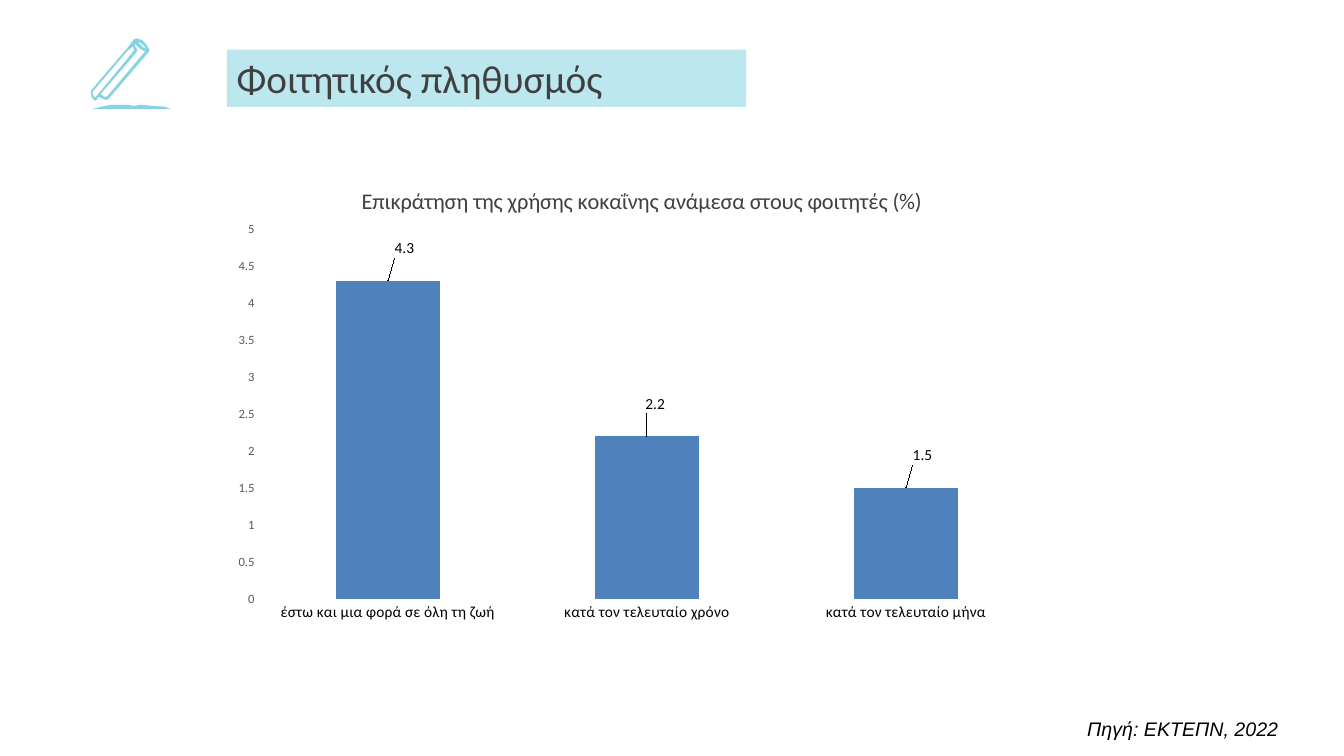
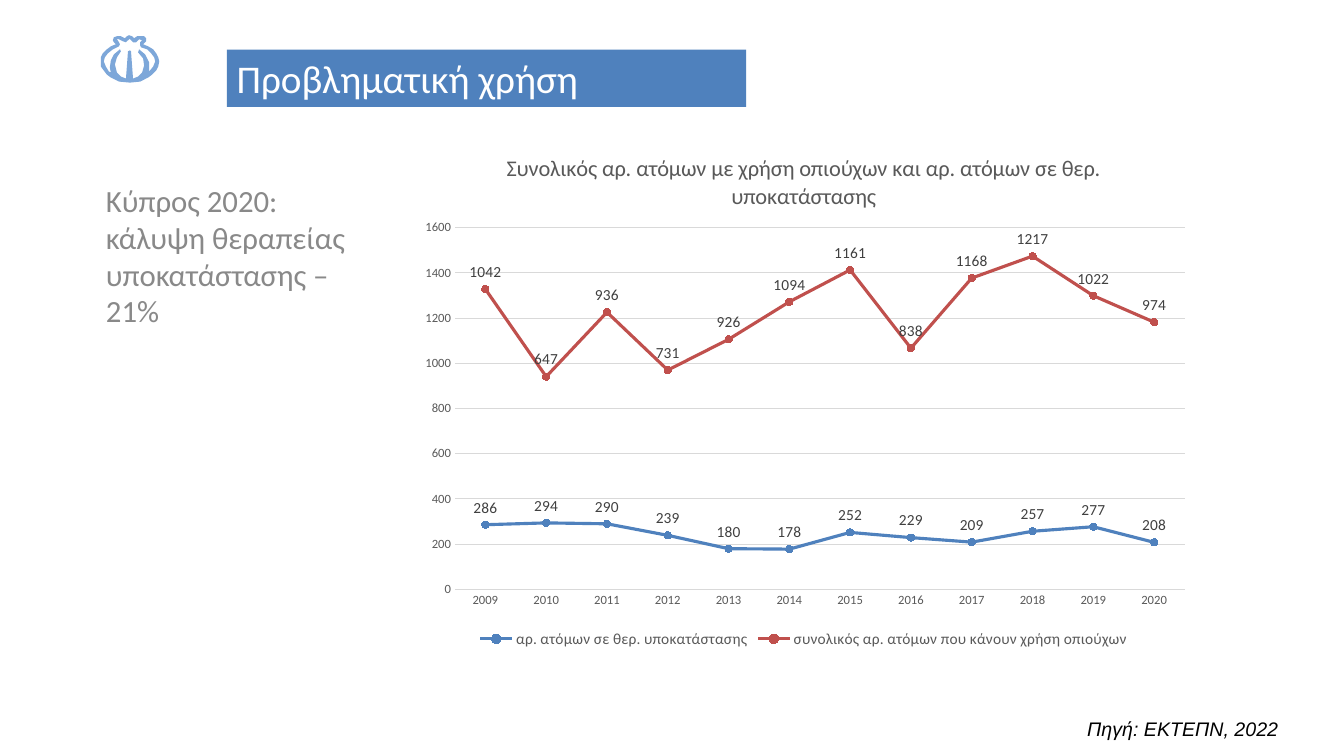
"""Build two slides on drug use in Cyprus, each with a title band, an icon and a chart."""
from dataclasses import dataclass

from lxml import etree
from pptx import Presentation
from pptx.chart.axis import CategoryAxis, ValueAxis
from pptx.chart.chart import Chart
from pptx.chart.data import CategoryChartData
from pptx.dml.color import RGBColor
from pptx.enum.chart import (XL_CHART_TYPE, XL_LABEL_POSITION, XL_LEGEND_POSITION,
                             XL_MARKER_STYLE, XL_TICK_MARK)
from pptx.enum.shapes import MSO_SHAPE
from pptx.enum.text import MSO_ANCHOR, PP_ALIGN
from pptx.oxml.ns import qn
from pptx.shapes.autoshape import Shape
from pptx.slide import Slide
from pptx.text.text import Font
from pptx.util import Pt

COLUMNS = XL_CHART_TYPE.COLUMN_CLUSTERED
STACKED_LINES = XL_CHART_TYPE.LINE_MARKERS_STACKED
ABOVE = XL_LABEL_POSITION.ABOVE
OUTSIDE_END = XL_LABEL_POSITION.OUTSIDE_END
LEGEND_BOTTOM = XL_LEGEND_POSITION.BOTTOM
CIRCLE = XL_MARKER_STYLE.CIRCLE
NO_TICK = XL_TICK_MARK.NONE
RECTANGLE = MSO_SHAPE.RECTANGLE
TOP = MSO_ANCHOR.TOP
LEFT = PP_ALIGN.LEFT

COLORS = {
    "black": "000000",
    "white": "FFFFFF",
    "dark": "404040",
    "gray": "595959",
    "muted": "898989",
    "grid": "D9D9D9",
    "pale_cyan": "BCE7EF",
    "cyan": "87D3E1",
    "light_blue": "7DA7D9",
    "blue": "4F81BD",
    "red": "C0504D",
}
BODY_FONT = "Calibri"
SOURCE_FONT = "Arial"
SOURCE = "Πηγή: ΕΚΤΕΠΝ, 2022"
ICON_UNIT = Pt(0.72)

Outline = list[tuple[int, int]]

PENCIL: list[Outline] = [
    [(148, 49), (145, 44), (141, 40), (136, 38), (133, 39), (126, 48), (91, 89), (90, 91),
     (91, 97), (94, 100), (95, 100), (98, 96), (104, 99), (107, 99), (148, 51)],
    [(144, 51), (106, 96), (103, 96), (100, 93), (127, 62), (136, 51), (136, 49),
     (134, 46), (134, 43), (136, 46), (140, 49)],
    [(133, 50), (125, 60), (96, 95), (94, 97), (92, 93), (92, 91), (126, 51), (132, 46)],
    [(145, 49), (142, 47), (136, 41), (140, 43), (144, 47)],
    [(92, 108), (100, 106), (110, 104), (125, 104), (133, 105), (140, 104), (150, 105),
     (164, 106), (169, 108)],
]
POPPY: list[Outline] = [
    [(115, 44), (110, 46), (106, 49), (102, 53), (100, 57), (100, 66), (103, 70), (106, 74),
     (110, 77), (118, 81), (129, 82), (139, 81), (147, 77), (151, 74), (155, 70), (157, 66),
     (158, 61), (157, 57), (155, 53), (152, 49), (147, 46), (142, 44), (143, 43), (145, 41),
     (145, 38), (143, 36), (136, 36), (133, 38), (131, 36), (128, 35), (126, 36), (124, 38),
     (120, 36), (116, 36), (113, 37), (112, 40), (113, 42)],
    [(118, 46), (112, 49), (107, 53), (104, 57), (103, 61), (105, 66), (108, 71), (110, 72),
     (109, 67), (110, 60), (113, 54), (119, 49), (120, 51), (116, 57), (114, 64), (116, 72),
     (120, 76), (125, 78), (127, 51), (129, 50), (130, 51), (132, 78), (137, 76), (141, 72),
     (143, 65), (142, 58), (137, 52), (138, 49), (144, 54), (148, 62), (148, 71), (152, 66),
     (154, 61), (153, 57), (150, 53), (146, 49), (140, 47), (139, 45), (139, 42), (141, 40),
     (138, 39), (135, 42), (132, 42), (129, 39), (128, 39), (125, 42), (122, 41), (118, 39),
     (116, 39), (118, 42), (119, 44)],
]


@dataclass(frozen=True)
class Area:
    left: float
    top: float
    width: float
    height: float


@dataclass(frozen=True)
class TextStyle:
    size: float
    color: str
    font: str = BODY_FONT
    italic: bool = False


@dataclass(frozen=True)
class Topic:
    title: str
    title_color: str
    band_color: str
    icon: list[Outline]
    icon_color: str


@dataclass(frozen=True)
class ChartPlan:
    kind: XL_CHART_TYPE
    area: Area
    plot: Area
    title: str
    title_style: TextStyle
    title_at: tuple[float, float]
    category_style: TextStyle
    maximum: float
    step: float
    categories: list[str]
    series: dict[str, list[float]]


BAND = Area(162, 35.5, 371, 41)
SOURCE_AREA = Area(769.5, 508.5, 187, 24.5)
COVERAGE_AREA = Area(50.5, 126, 224, 165)
SOURCE_STYLE = TextStyle(14, "black", SOURCE_FONT, True)
COVERAGE_STYLE = TextStyle(22, "muted")
SMALL_GRAY = TextStyle(9, "gray")

STUDENTS = Topic("Φοιτητικός πληθυσμός", "dark", "pale_cyan", PENCIL, "cyan")
PROBLEM_USE = Topic("Προβληματική χρήση", "white", "blue", POPPY, "light_blue")

COCAINE_CHART = ChartPlan(
    COLUMNS, Area(161, 113, 590.5, 338.5), Area(0.04, 0.15, 0.94, 0.78),
    "Επικράτηση της χρήσης κοκαΐνης ανάμεσα στους φοιτητές (%)",
    TextStyle(16, "dark"), (0.16, 0.05), TextStyle(11, "black"), 5, 0.5,
    ["έστω και μια φορά σε όλη τη ζωή", "κατά τον τελευταίο χρόνο", "κατά τον τελευταίο μήνα"],
    {"Series 1": [4.3, 2.2, 1.5]},
)
OPIOID_CHART = ChartPlan(
    STACKED_LINES, Area(291, 91.5, 566.5, 374.5), Area(0.06, 0.19, 0.92, 0.69),
    "Συνολικός αρ. ατόμων με χρήση οπιούχων και αρ. ατόμων σε θερ. υποκατάστασης",
    TextStyle(16, "gray"), (0.12, 0.04), SMALL_GRAY, 1600, 200,
    [str(year) for year in range(2009, 2021)],
    {
        "αρ. ατόμων σε θερ. υποκατάστασης":
            [286, 294, 290, 239, 180, 178, 252, 229, 209, 257, 277, 208],
        "συνολικός αρ. ατόμων που κάνουν χρήση οπιούχων":
            [1042, 647, 936, 731, 926, 1094, 1161, 838, 1168, 1217, 1022, 974],
    },
)


def color(name: str) -> RGBColor:
    return RGBColor.from_string(COLORS[name])


def lengths(area: Area) -> tuple[Pt, Pt, Pt, Pt]:
    return Pt(area.left), Pt(area.top), Pt(area.width), Pt(area.height)


def style_font(font: Font, style: TextStyle) -> None:
    font.name = style.font
    font.size = Pt(style.size)
    font.bold = False
    font.italic = style.italic
    font.color.rgb = color(style.color)


def paint(shape: Shape, fill: str) -> None:
    shape.shadow.inherit = False
    shape.fill.solid()
    shape.fill.fore_color.rgb = color(fill)
    shape.line.fill.background()


def write(box: Shape, text: str, style: TextStyle) -> None:
    frame = box.text_frame
    frame.word_wrap = True
    frame.vertical_anchor = TOP
    para = frame.paragraphs[0]
    para.alignment = LEFT
    span = para.add_run()
    span.text = text
    style_font(span.font, style)


def add_text(page: Slide, area: Area, text: str, style: TextStyle) -> Shape:
    box = page.shapes.add_textbox(*lengths(area))
    write(box, text, style)
    return box


def add_icon(page: Slide, outlines: list[Outline], fill: str) -> None:
    builder = page.shapes.build_freeform(*outlines[0][0], scale=ICON_UNIT)
    for index, outline in enumerate(outlines):
        if index:
            builder.move_to(*outline[0])
        builder.add_line_segments(outline[1:], close=True)
    paint(builder.convert_to_shape(), fill)


def add_page(deck: Presentation, topic: Topic) -> Slide:
    page = deck.slides.add_slide(deck.slide_layouts[6])
    add_text(page, SOURCE_AREA, SOURCE, SOURCE_STYLE)
    band = page.shapes.add_shape(RECTANGLE, *lengths(BAND))
    paint(band, topic.band_color)
    write(band, topic.title, TextStyle(28, topic.title_color))
    add_icon(page, topic.icon, topic.icon_color)
    return page


def set_layout(parent: etree.ElementBase, index: int, settings: dict[str, object]) -> None:
    for old in parent.findall(qn("c:layout")):
        parent.remove(old)
    layout = etree.Element(qn("c:layout"))
    manual = etree.SubElement(layout, qn("c:manualLayout"))
    for tag, value in settings.items():
        etree.SubElement(manual, qn(f"c:{tag}")).set("val", str(value))
    parent.insert(index, layout)


def style_axis(axis: CategoryAxis | ValueAxis, style: TextStyle) -> None:
    axis.major_tick_mark = axis.minor_tick_mark = NO_TICK
    axis.has_major_gridlines = False
    axis.format.line.fill.background()
    style_font(axis.tick_labels.font, style)


def add_chart(page: Slide, plan: ChartPlan) -> Chart:
    data = CategoryChartData()
    data.categories = plan.categories
    for name, values in plan.series.items():
        data.add_series(name, values)
    chart = page.shapes.add_chart(plan.kind, *lengths(plan.area), data).chart
    style_font(chart.font, TextStyle(10, "black"))
    chart.has_legend = False
    chart.has_title = True
    span = chart.chart_title.text_frame.paragraphs[0].add_run()
    span.text = plan.title
    style_font(span.font, plan.title_style)
    left, top = plan.title_at
    edges = {"xMode": "edge", "yMode": "edge"}
    set_layout(chart.chart_title._element, 1, {**edges, "x": left, "y": top})
    plot = plan.plot
    set_layout(chart._chartSpace.chart.plotArea, 0, {
        "layoutTarget": "inner", **edges,
        "x": plot.left, "y": plot.top, "w": plot.width, "h": plot.height})
    style_axis(chart.category_axis, plan.category_style)
    style_axis(chart.value_axis, SMALL_GRAY)
    chart.value_axis.minimum_scale = 0
    chart.value_axis.maximum_scale = plan.maximum
    chart.value_axis.major_unit = plan.step
    chart.plots[0].vary_by_categories = False
    return chart


def style_columns(chart: Chart) -> None:
    chart.plots[0].gap_width = 150
    series = chart.plots[0].series[0]
    series.format.fill.solid()
    series.format.fill.fore_color.rgb = color("blue")
    for index, shift in enumerate((0.02, 0.01, 0.02)):
        label = series.points[index].data_label
        style_font(label.font, TextStyle(11, "black"))
        label.position = OUTSIDE_END
        element = series._element.xpath("c:dLbls/c:dLbl")[index]
        set_layout(element, 1, {"x": shift, "y": -0.04})


def style_lines(chart: Chart) -> None:
    value_axis = chart.value_axis
    value_axis.has_major_gridlines = True
    for line in (value_axis.major_gridlines.format.line, chart.category_axis.format.line):
        line.color.rgb = color("grid")
        line.width = Pt(0.75)
    chart.has_legend = True
    chart.legend.position = LEGEND_BOTTOM
    chart.legend.include_in_layout = False
    style_font(chart.legend.font, TextStyle(11, "gray"))
    for series, name in zip(chart.plots[0].series, ("blue", "red")):
        series.smooth = False
        series.format.line.color.rgb = color(name)
        series.format.line.width = Pt(2.25)
        marker = series.marker
        marker.style = CIRCLE
        marker.size = 5
        marker.format.fill.solid()
        marker.format.fill.fore_color.rgb = color(name)
        marker.format.line.color.rgb = color(name)
        labels = series.data_labels
        labels.show_value = True
        labels.position = ABOVE
        style_font(labels.font, TextStyle(11, "dark"))


def main() -> None:
    deck = Presentation()
    deck.slide_width, deck.slide_height = Pt(960), Pt(540)
    style_columns(add_chart(add_page(deck, STUDENTS), COCAINE_CHART))
    page = add_page(deck, PROBLEM_USE)
    style_lines(add_chart(page, OPIOID_CHART))
    coverage = add_text(page, COVERAGE_AREA,
                        "Κύπρος 2020: κάλυψη θεραπείας υποκατάστασης – 21%", COVERAGE_STYLE)
    coverage.text_frame.margin_left = Pt(25.2)
    deck.save("out.pptx")


if __name__ == "__main__":
    main()
